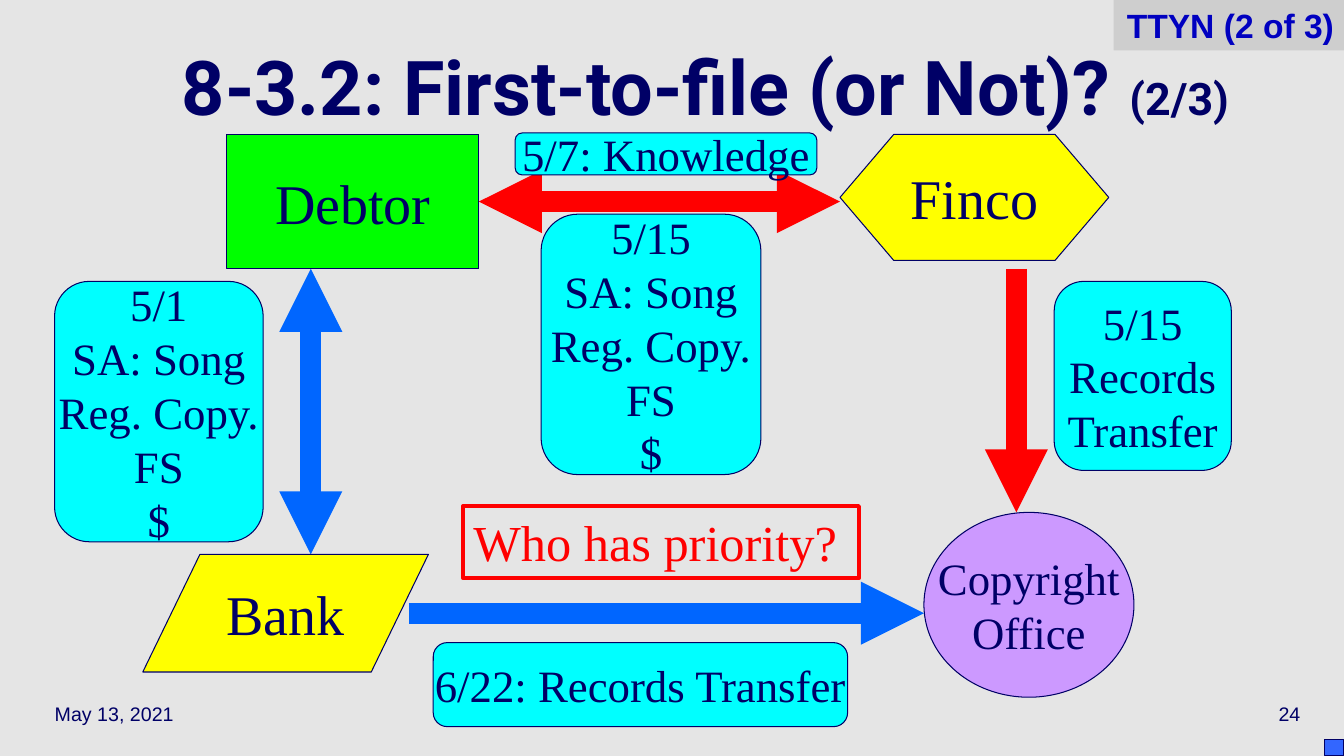
import pptx
import pptx.dml.color
import pptx.enum.shapes
import pptx.enum.text
import pptx.oxml
import pptx.oxml.ns
import pptx.util

Pt = pptx.util.Pt
Kind = pptx.enum.shapes.MSO_SHAPE
Align = pptx.enum.text.PP_ALIGN
Anchor = pptx.enum.text.MSO_ANCHOR

THEME = {
    "background": "E5E5E5", "tag": "CECECE", "ink": "000066", "tag ink": "0000C0",
    "debtor": "00FF00", "party": "FFFF00", "event": "00FFFF", "office": "CC99FF",
    "red": "FF0000", "blue": "0066FF", "corner": "3366FF",
    "serif": "Times New Roman", "sans": "Arial", "display": "Roboto",
    "title size": 54, "party size": 40, "question size": 36, "event size": 32,
    "tag size": 24, "footer size": 14, "outline": 0.75, "frame": 3, "arrow": 15,
}

# Content: lengths in points, boxes as left, top, width, height
TITLE = [("8‑3.2: First-to-file (or Not)? ", "title size"), ("(2/3)", "event size")]
TITLE_BOX = (64, 24, 880, 90)
FOOTERS = [("May 13, 2021", 32, Align.LEFT), ("24", 736, Align.RIGHT)]
ARROWS = [  # start, end, colour, two-headed
    ((342, 144), (600, 144), "red", True),
    ((222, 192), (222, 396), "blue", True),
    ((726, 192), (726, 366), "red", False),
    ((292, 438), (660, 438), "blue", False),
]
NODES = [  # shape, fill, size, box, lines
    (Kind.FLOWCHART_DATA, "party", "party size", (102, 396, 204, 84), ["Bank"]),
    (Kind.FLOWCHART_PROCESS, "debtor", "party size", (162, 96, 180, 96), ["Debtor"]),
    (Kind.FLOWCHART_PREPARATION, "party", "party size", (600, 96, 192, 90), ["Finco"]),
    (Kind.FLOWCHART_CONNECTOR, "office", "event size", (660, 366, 150, 132),
     ["Copyright", "Office"]),
]
SECURITY = ["SA: Song", "Reg. Copy.", "FS", "$"]
EVENTS = [  # box, lines
    ((39, 201, 149, 186), ["5/1"] + SECURITY),
    ((386.5, 153, 157, 186), ["5/15"] + SECURITY),
    ((753, 201, 126.5, 135), ["5/15", "Records", "Transfer"]),
    ((309.5, 459, 296, 60), ["6/22: Records Transfer"]),
    ((368, 95, 215.5, 30), ["5/7: Knowledge"]),
]
QUESTION = ("Who has priority?", (331, 361.5, 282.5, 51.5))
TAG = ("TTYN (2 of 3)", (795.5, 0, 164.5, 36))
CORNER_BOX = (946, 528, 14, 12)


def color(name):
    return pptx.dml.color.RGBColor.from_string(THEME[name])


def assign(target, values):
    for name, value in values.items():
        setattr(target, name, value)


def write(shape, lines, face="serif", ink="ink", align=Align.CENTER,
          anchor=Anchor.MIDDLE, wrap=False, bold=False, spacing=1.0):
    """Each line is a list of (text, size name) runs."""
    frame = shape.text_frame
    assign(frame, {"word_wrap": wrap, "vertical_anchor": anchor})
    for index, runs in enumerate(lines):
        paragraph = frame.add_paragraph() if index else frame.paragraphs[0]
        assign(paragraph, {"alignment": align, "line_spacing": spacing})
        for text, size in runs:
            run = paragraph.add_run()
            run.text = text
            assign(run.font, {"name": THEME[face], "size": Pt(THEME[size]), "bold": bold})
            run.font.color.rgb = color(ink)


def add_box(slide, kind, box, fill=None, line="ink", width="outline"):
    shape = slide.shapes.add_shape(kind, *map(Pt, box))
    shape.shadow.inherit = False
    if fill:
        shape.fill.solid()
        shape.fill.fore_color.rgb = color(fill)
    else:
        shape.fill.background()
    if line:
        shape.line.color.rgb = color(line)
        shape.line.width = Pt(THEME[width])
    else:
        shape.line.fill.background()
    return shape


def add_arrow(slide, start, end, line, double):
    straight = pptx.enum.shapes.MSO_CONNECTOR.STRAIGHT
    arrow = slide.shapes.add_connector(straight, *map(Pt, start + end))
    arrow.line.color.rgb = color(line)
    arrow.line.width = Pt(THEME["arrow"])
    outline = arrow.line._get_or_add_ln()
    for tag in ["a:headEnd", "a:tailEnd"] if double else ["a:tailEnd"]:
        head = pptx.oxml.parse_xml(
            f'<{tag} {pptx.oxml.ns.nsdecls("a")} type="triangle"/>')
        outline.append(head)
    effects = pptx.oxml.parse_xml(f'<a:effectLst {pptx.oxml.ns.nsdecls("a")}/>')
    arrow._element.spPr.append(effects)


def main():
    presentation = pptx.Presentation()
    assign(presentation, {"slide_width": Pt(960), "slide_height": Pt(540)})
    slide = presentation.slides.add_slide(presentation.slide_layouts[6])
    slide.background.fill.solid()
    slide.background.fill.fore_color.rgb = color("background")

    # Title and footers
    title = slide.shapes.add_textbox(*map(Pt, TITLE_BOX))
    write(title, [TITLE], face="display", wrap=True, bold=True, spacing=0.7)
    for text, left, align in FOOTERS:
        footer = slide.shapes.add_textbox(Pt(left), Pt(492), Pt(200), Pt(36))
        write(footer, [[(text, "footer size")]], face="sans", align=align, wrap=True)

    # Diagram: arrows below, then parties and dated events
    for arrow in ARROWS:
        add_arrow(slide, *arrow)
    events = [(Kind.FLOWCHART_ALTERNATE_PROCESS, "event", "event size", box, lines)
              for box, lines in EVENTS]
    for kind, fill, size, box, lines in NODES + events:
        write(add_box(slide, kind, box, fill), [[(line, size)] for line in lines])

    # Question, corner square and tag
    text, box = QUESTION
    question = add_box(slide, Kind.RECTANGLE, box, line="red", width="frame")
    write(question, [[(text, "question size")]], ink="red", align=Align.LEFT,
          anchor=Anchor.TOP, wrap=True)
    add_box(slide, Kind.RECTANGLE, CORNER_BOX, "corner")
    text, box = TAG
    tag = add_box(slide, Kind.RECTANGLE, box, "tag", line=None)
    write(tag, [[(text, "tag size")]], face="sans", ink="tag ink", align=Align.RIGHT,
          anchor=Anchor.TOP, wrap=True, bold=True)

    presentation.save("out.pptx")


if __name__ == "__main__":
    main()
